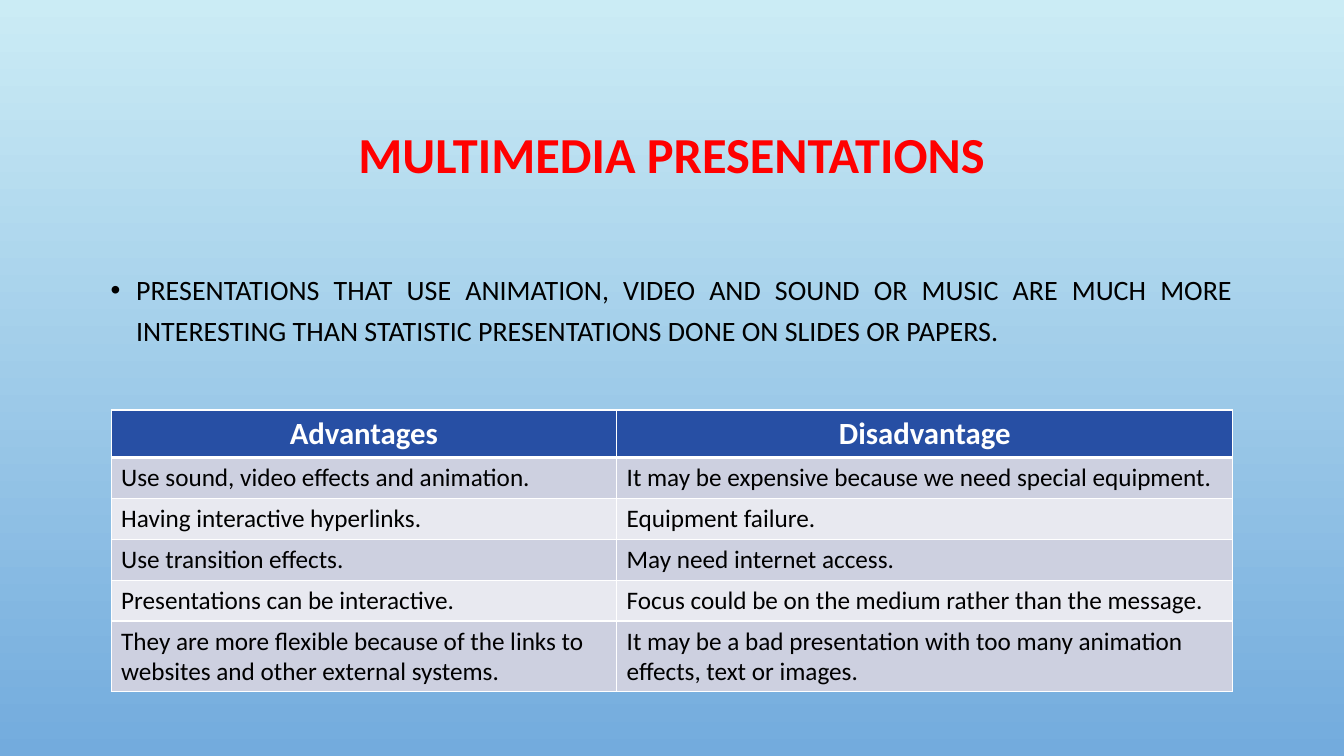
from lxml import etree
from pptx import Presentation
from pptx.dml.color import RGBColor as RGB
from pptx.enum.text import MSO_ANCHOR as Anchor, PP_ALIGN as Align
from pptx.oxml.ns import qn
from pptx.util import Cm, Pt

COLORS = {
    "sky": "CBECF5", "blue": "73ABDD", "title": "FF0000", "text": "000000",
    "white": "FFFFFF", "header": "274FA4", "odd": "CDD0E0", "even": "E8E9F0",
}
ROWS = [
    ("Advantages", "Disadvantage"),
    ("Use sound, video effects and animation.",
     "It may be expensive because we need special equipment."),
    ("Having interactive hyperlinks.", "Equipment failure."),
    ("Use transition effects.", "May need internet access."),
    ("Presentations can be interactive.",
     "Focus could be on the medium rather than the message."),
    ("They are more flexible because of the links to websites and other external systems.",
     "It may be a bad presentation with too many animation effects, text or images."),
]
ROW_HEIGHTS = [1.2, 1.03, 1.03, 1.03, 1.03, 1.78]
COLUMN_WIDTHS = [12.74, 15.53]


def style_text(paragraph, size, color, align, bold=False):
    paragraph.alignment = align
    for run in paragraph.runs:
        run.font.name = "Calibri"
        run.font.size = Pt(size)
        run.font.bold = bold
        run.font.color.rgb = RGB.from_string(COLORS[color])


def set_borders(cell, bottom_width):
    # Border lines come before the fill inside the cell properties
    properties = cell._tc.get_or_add_tcPr()
    widths = {"lnL": 1, "lnR": 1, "lnT": 1, "lnB": bottom_width}
    for index, (side, width) in enumerate(widths.items()):
        line = etree.Element(qn(f"a:{side}"), w=str(Pt(width)))
        fill = etree.SubElement(line, qn("a:solidFill"))
        etree.SubElement(fill, qn("a:srgbClr"), val=COLORS["white"])
        properties.insert(index, line)


presentation = Presentation()
presentation.slide_width = Cm(33.87)
presentation.slide_height = Cm(19.05)
slide = presentation.slides.add_slide(presentation.slide_layouts[6])

# Background gradient, top to bottom
background = slide.background.fill
background.gradient()
background.gradient_angle = 270
for stop, name, position in zip(background.gradient_stops, ("sky", "blue"), (0, 1)):
    stop.color.rgb = RGB.from_string(COLORS[name])
    stop.position = position

# Title
title = slide.shapes.add_textbox(Cm(2.54), Cm(1.73), Cm(28.78), Cm(4.45))
title.text_frame.word_wrap = True
title.text_frame.vertical_anchor = Anchor.MIDDLE
title.text_frame.text = "MULTIMEDIA PRESENTATIONS"
paragraph = title.text_frame.paragraphs[0]
paragraph.line_spacing = 0.9
style_text(paragraph, 36, "title", Align.CENTER, bold=True)

# Bulleted statement
body = slide.shapes.add_textbox(Cm(2.54), Cm(6.58), Cm(28.78), Cm(9.5))
body.text_frame.word_wrap = True
body.text_frame.text = (
    "PRESENTATIONS THAT USE ANIMATION, VIDEO AND SOUND OR MUSIC ARE MUCH MORE "
    "INTERESTING THAN STATISTIC PRESENTATIONS DONE ON SLIDES OR PAPERS."
)
paragraph = body.text_frame.paragraphs[0]
paragraph.line_spacing = 1.2
properties = paragraph._p.get_or_add_pPr()
properties.set("marL", str(Cm(0.64)))
properties.set("indent", str(Cm(-0.64)))
bullet_color = etree.SubElement(properties, qn("a:buClr"))
etree.SubElement(bullet_color, qn("a:srgbClr"), val=COLORS["text"])
etree.SubElement(properties, qn("a:buFont"), typeface="Arial")
etree.SubElement(properties, qn("a:buChar"), char="•")
style_text(paragraph, 20, "text", Align.JUSTIFY)

# Comparison table
table = slide.shapes.add_table(
    len(ROWS), len(COLUMN_WIDTHS), Cm(2.8), Cm(10.33),
    Cm(sum(COLUMN_WIDTHS)), Cm(sum(ROW_HEIGHTS)),
).table
for column, width in zip(table.columns, COLUMN_WIDTHS):
    column.width = Cm(width)
for row_index, (texts, height) in enumerate(zip(ROWS, ROW_HEIGHTS)):
    table.rows[row_index].height = Cm(height)
    is_header = row_index == 0
    fill_name = "header" if is_header else "odd" if row_index % 2 else "even"
    for column_index, text in enumerate(texts):
        cell = table.cell(row_index, column_index)
        cell.text_frame.text = text
        cell.fill.solid()
        cell.fill.fore_color.rgb = RGB.from_string(COLORS[fill_name])
        set_borders(cell, 3 if is_header else 1)
        paragraph = cell.text_frame.paragraphs[0]
        if is_header:
            style_text(paragraph, 22, "white", Align.CENTER, bold=True)
        else:
            style_text(paragraph, 18, "text", Align.LEFT)

presentation.save("out.pptx")
